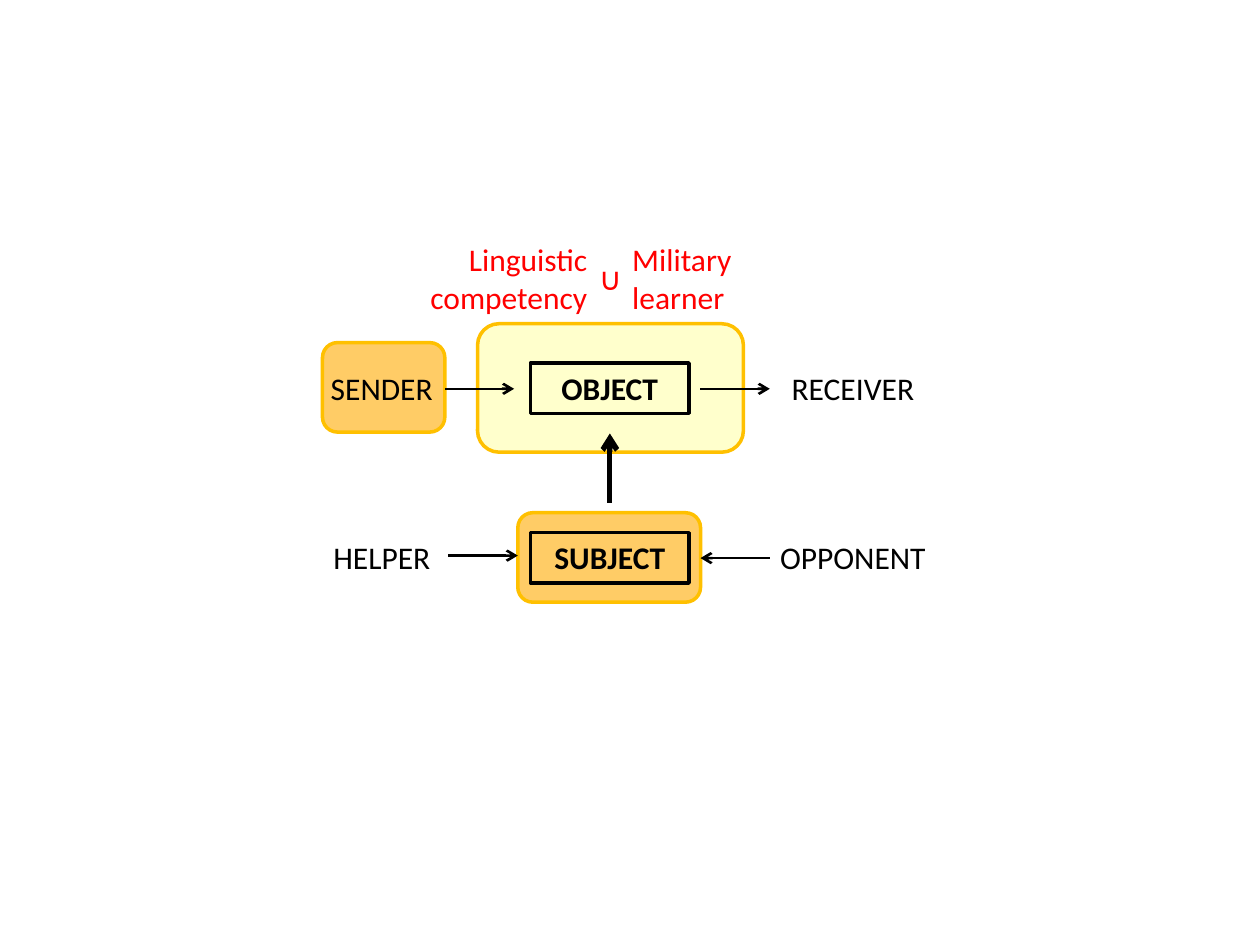
from lxml import etree
from pptx import Presentation
from pptx import util as u
from pptx.dml.color import RGBColor
from pptx.enum import shapes, text
from pptx.oxml.ns import qn

Pt = u.Pt
BLACK, RED, GOLD = "000000", "FF0000", "FFC000"
ORANGE, CREAM = "FFCC66", "FFFFCC"
CENTER, LEFT, RIGHT = text.PP_ALIGN.CENTER, text.PP_ALIGN.LEFT, text.PP_ALIGN.RIGHT


def color(value):
    return RGBColor.from_string(value)


def add_text(content, left, top, width, height=29.08, fill=BLACK, bold=False, align=CENTER):
    box = slide.shapes.add_textbox(Pt(left), Pt(top), Pt(width), Pt(height))
    frame = box.text_frame
    frame.word_wrap = True
    frame.auto_size = text.MSO_AUTO_SIZE.SHAPE_TO_FIT_TEXT
    frame.text = content
    for paragraph in frame.paragraphs:
        paragraph.alignment = align
        font = paragraph.runs[0].font
        font.name = "Calibri"
        font.size = Pt(18)
        font.bold = bold
        font.color.rgb = color(fill)


presentation = Presentation()
presentation.slide_width = Pt(720)
presentation.slide_height = Pt(540)
slide = presentation.slides.add_slide(presentation.slide_layouts[6])

rounded = shapes.MSO_SHAPE.ROUNDED_RECTANGLE
rectangle = shapes.MSO_SHAPE.RECTANGLE
boxes = [
    (rounded, 295.9, 293, 104.4, 51.1, ORANGE, GOLD),
    (rounded, 184.3, 195.8, 69.9, 51.1, ORANGE, GOLD),
    (rounded, 272.9, 185, 151.9, 73.4, CREAM, GOLD),
    (rectangle, 303.1, 207.4, 90.7, 28.8, None, BLACK),
    (rectangle, 303.1, 304.4, 90.7, 28.8, None, BLACK),
]
for kind, left, top, width, height, fill, outline in boxes:
    shape = slide.shapes.add_shape(kind, Pt(left), Pt(top), Pt(width), Pt(height))
    shape.shadow.inherit = False
    if fill:
        shape.fill.solid()
        shape.fill.fore_color.rgb = color(fill)
    else:
        shape.fill.background()
    shape.line.color.rgb = color(outline)
    shape.line.width = Pt(2)

upper, lower = 207.4, 303.8
roles = [
    ("SENDER", 172.8, upper, 90.7, False),
    ("HELPER", 164.2, lower, 108, False),
    ("OPPONENT", 433.4, lower, 108, False),
    ("RECEIVER", 433.4, upper, 108, False),
    ("OBJECT", 303.1, upper, 90.7, True),
    ("SUBJECT", 303.1, lower, 90.7, True),
]
for name, left, top, width, bold in roles:
    add_text(name, left, top, width, bold=bold)

arrows = [
    (348.5, 287.3, 348.5, 247.7, 3),
    (254.2, 222.2, 293.8, 222.2, 1.5),
    (400.3, 222.2, 439.9, 222.2, 1.5),
    (256.3, 317.5, 295.9, 317.5, 1.5),
    (439.9, 318.9, 400.3, 318.9, 1.5),
]
for start_x, start_y, end_x, end_y, weight in arrows:
    arrow = slide.shapes.add_connector(
        shapes.MSO_CONNECTOR.STRAIGHT, Pt(start_x), Pt(start_y), Pt(end_x), Pt(end_y)
    )
    arrow.line.color.rgb = color(BLACK)
    arrow.line.width = Pt(weight)
    etree.SubElement(arrow.line._get_or_add_ln(), qn("a:tailEnd"), type="arrow")
    etree.SubElement(arrow._element.spPr, qn("a:effectLst"))

add_text("∪", 331.9, 144.7, 33.8, fill=RED)
add_text("Linguistic\ncompetency", 221, 133.9, 121.7, 50.9, fill=RED, align=RIGHT)
add_text("Military\nlearner", 354.2, 133.9, 102.2, 50.9, fill=RED, align=LEFT)

presentation.save("out.pptx")
